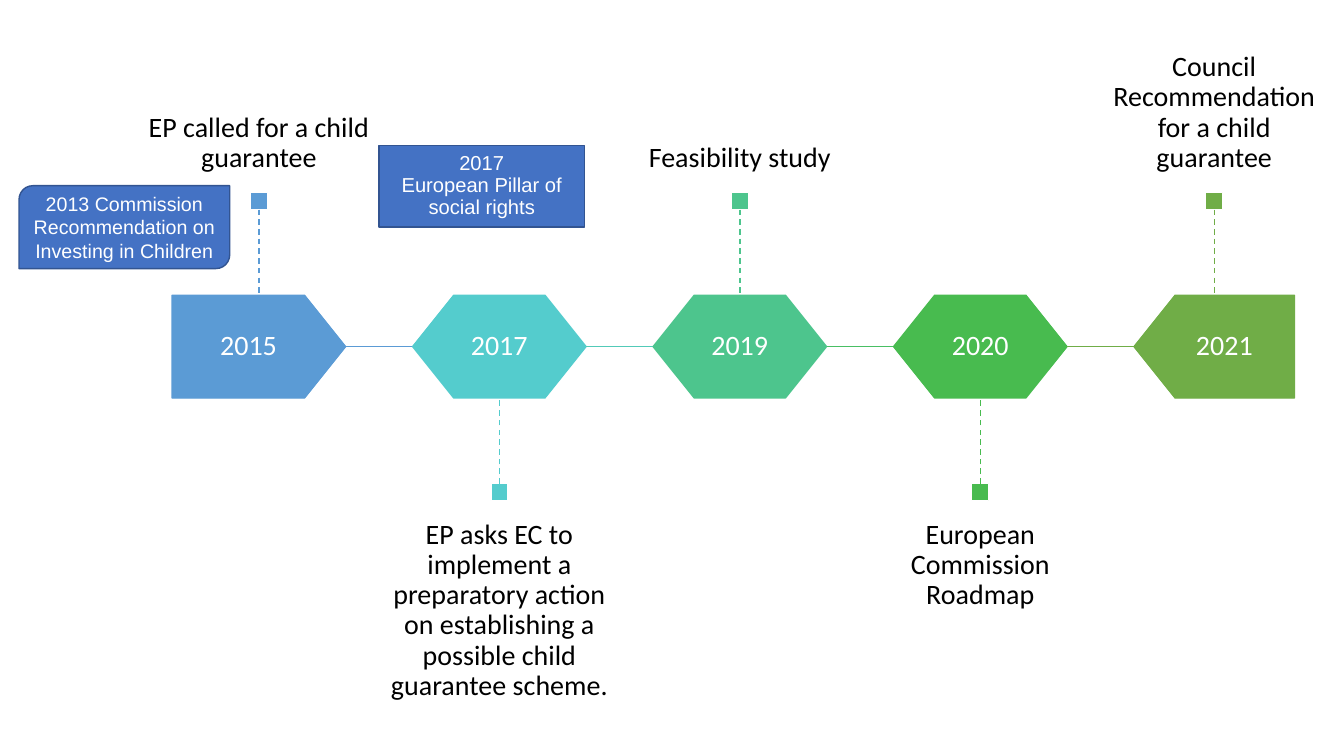
"""Builds a one-slide timeline of the steps towards a child guarantee."""
import pptx
import pptx.util
import pptx.dml.color
import pptx.enum.dml
import pptx.enum.shapes
import pptx.enum.text
from lxml import etree
from pptx.oxml.ns import qn

Cm, Pt = pptx.util.Cm, pptx.util.Pt
KIND = pptx.enum.shapes.MSO_SHAPE
ANCHOR = pptx.enum.text.MSO_ANCHOR

STEPS = [
    ("2015", "EP called for a child guarantee", "5B9BD5", "5B9BD5"),
    ("2017", "EP asks EC to implement a preparatory action on establishing "
             "a possible child guarantee scheme.", "54CCCD", "52CAB8"),
    ("2019", "Feasibility study", "4DC58D", "49BF64"),
    ("2020", "European Commission\vRoadmap", "48BB4F", "70AD47"),
    ("2021", "Council Recommendation for a child guarantee", "70AD47", None),
]
TITLE = "2017\vEuropean Pillar of social rights"
NOTE = "2013 Commission Recommendation on Investing in Children"
BLUE, EDGE, WHITE, BLACK = "4472C4", "325491", "FFFFFF", "000000"

LEFT, TOP, WIDE, HIGH = 4.34, 7.44, 4.37, 2.59
LAST, PITCH = 4.04, 6.06
MARK, STEM, TEXT, EXTRA = 0.43, 2.16, 6.4, 1.65
MID, BASE = TOP + HIGH / 2, TOP + HIGH


def color(code):
    return pptx.dml.color.RGBColor.from_string(code)


def paint(shape, fill, line):
    shape.fill.solid()
    shape.fill.fore_color.rgb = color(fill)
    shape.line.color.rgb = color(line)
    shape.line.width = Pt(1)


def write(shape, text, font, size, code, anchor=ANCHOR.MIDDLE, gap=0.9, pad=None):
    frame = shape.text_frame
    frame.text = text
    frame.word_wrap = True
    frame.auto_size = pptx.enum.text.MSO_AUTO_SIZE.NONE
    frame.vertical_anchor = anchor
    if pad is not None:
        frame.margin_left = frame.margin_right = 0
        frame.margin_top = frame.margin_bottom = Cm(pad)
    for para in frame.paragraphs:
        para.alignment = pptx.enum.text.PP_ALIGN.CENTER
        para.line_spacing = gap
        for run in para.runs:
            run.font.name, run.font.size = font, Pt(size)
            run.font.color.rgb = color(code)


def block(slide, kind, box, fill, line):
    shape = slide.shapes.add_shape(kind, *map(Cm, box))
    shape.shadow.inherit = False
    paint(shape, fill, line)
    return shape


def link(slide, ends, code):
    line = slide.shapes.add_connector(
        pptx.enum.shapes.MSO_CONNECTOR.STRAIGHT, *map(Cm, ends))
    line.line.color.rgb = color(code)
    line.line.width = Pt(1)
    etree.SubElement(line._element.spPr, qn("a:effectLst"))
    return line


def heading(slide):
    title = slide.shapes.title
    title.left, title.top, title.width, title.height = map(Cm, (9.55, 3.66, 5.18, 2.06))
    form = etree.SubElement(title._element.spPr, qn("a:prstGeom"), prst="round2SameRect")
    etree.SubElement(form, qn("a:avLst"))
    paint(title, BLUE, EDGE)
    write(title, TITLE, "Arial", 14.4, WHITE)


def step(slide, spot, year, label, code, bridge):
    first, final, above = spot == 0, spot == len(STEPS) - 1, spot % 2 == 0
    left, wide = LEFT + spot * PITCH, LAST if final else WIDE
    mid = left + wide / 2

    kind = KIND.PENTAGON if first or final else KIND.HEXAGON
    shape = block(slide, kind, (left, TOP, wide, HIGH), code, code)
    shape.adjustments[0] = 0.4
    if final:
        shape._element.spPr.xfrm.set("flipH", "1")
    write(shape, year, "Calibri", 20, WHITE, pad=0)
    if bridge:
        link(slide, (left + wide, MID, left + PITCH, MID), bridge)

    edge = TOP if above else BASE
    tip = edge - STEM if above else edge + STEM
    top = tip - MARK if above else tip
    mark = block(slide, KIND.RECTANGLE, (mid - MARK / 2, top, MARK, MARK), code, WHITE)
    stem = link(slide, (mid, tip, mid, edge), code)
    stem.begin_connect(mark, 2 if above else 0)
    stem.line.dash_style = pptx.enum.dml.MSO_LINE.DASH

    span = wide + EXTRA
    high = top if above else TEXT
    start = 0 if above else top + MARK
    text = slide.shapes.add_textbox(*map(Cm, (mid - span / 2, start, span, high)))
    write(text, label, "Calibri", 20, BLACK,
          ANCHOR.BOTTOM if above else ANCHOR.TOP, pad=0.48)


def main():
    deck = pptx.Presentation()
    deck.slide_width, deck.slide_height = Cm(33.87), Cm(19.05)
    slide = deck.slides.add_slide(deck.slide_layouts[5])
    heading(slide)
    note = block(slide, KIND.ROUND_2_DIAG_RECTANGLE, (0.48, 4.68, 5.31, 2.09), BLUE, EDGE)
    write(note, NOTE, "Arial", 14, WHITE, gap=1)
    for spot, item in enumerate(STEPS):
        step(slide, spot, *item)
    deck.save("out.pptx")


if __name__ == "__main__":
    main()
